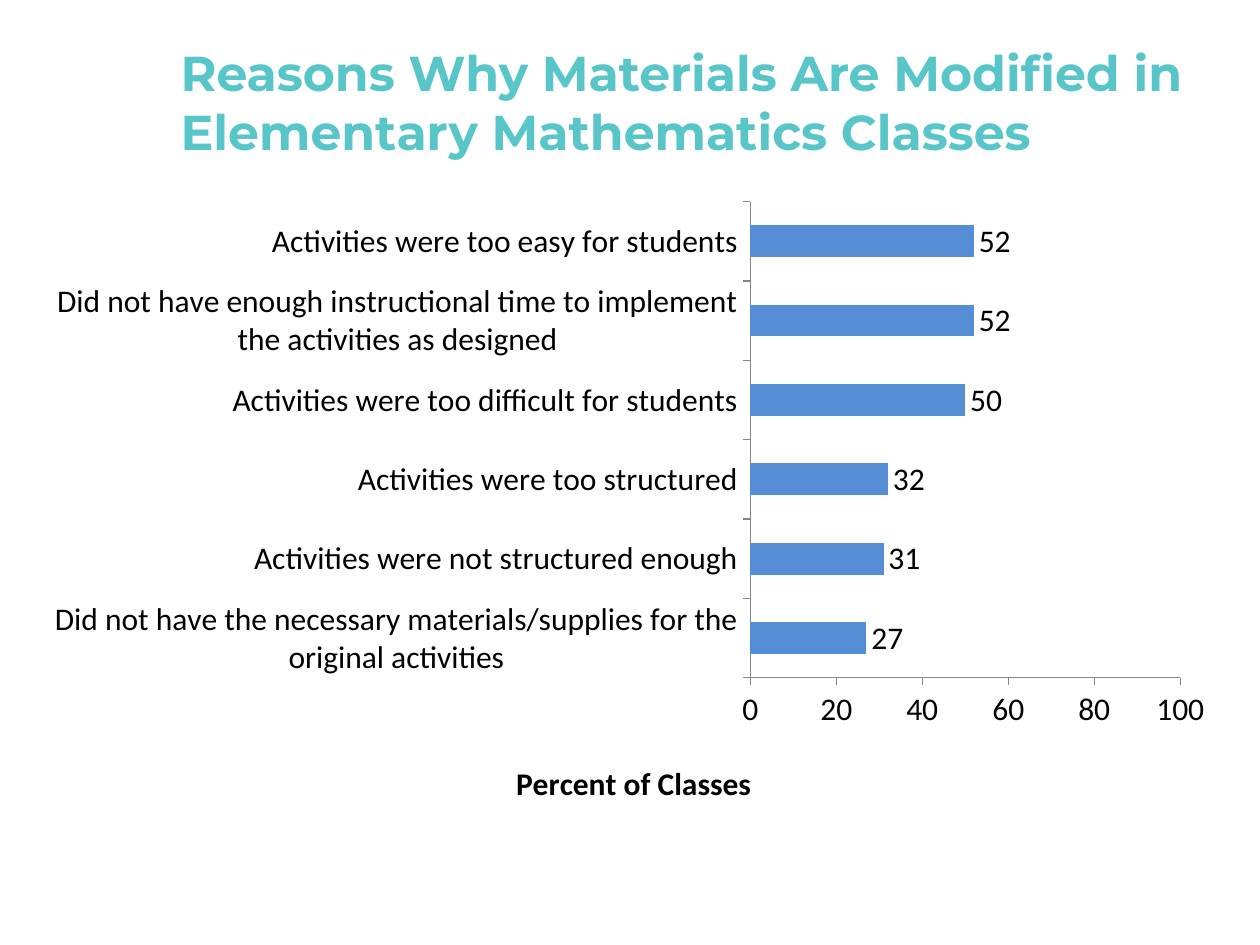
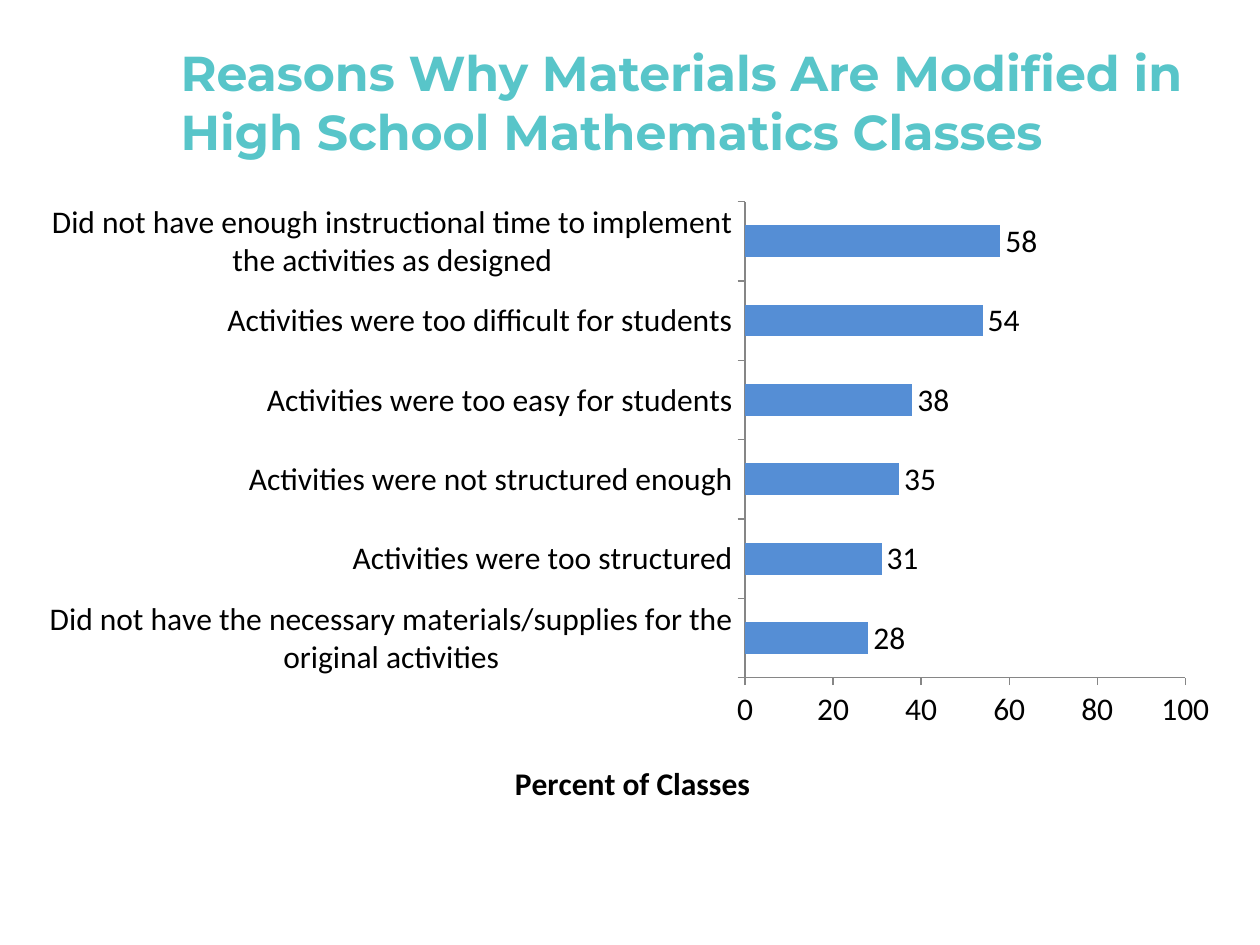
from dataclasses import dataclass

from pptx import Presentation
from pptx import util as u
from pptx.chart.axis import CategoryAxis, ValueAxis
from pptx.chart.chart import Chart
from pptx.chart.data import CategoryChartData
from pptx.dml.color import RGBColor
from pptx.enum import chart as charts, text
from pptx.oxml import parse_xml
from pptx.oxml.ns import nsdecls, qn
from pptx.slide import Slide

COLORS = {"title": "58C5C9", "bar": "558ED5", "text": "000000", "axis": "868686"}
TITLE_FONT = "Montserrat"
CHART_FONT = "Calibri"
SLIDE_WIDTH = 720
CHART_TOP = 108
CHART_HEIGHT = 360

NO_SUPPLIES = "Did not have the necessary materials/supplies for the original activities"
TOO_LOOSE = "Activities were not structured enough"
TOO_STRUCTURED = "Activities were too structured"
TOO_DIFFICULT = "Activities were too difficult for students"
TOO_EASY = "Activities were too easy for students"
NO_TIME = "Did not have enough instructional time to implement the activities as designed"


@dataclass(frozen=True)
class ReasonsSlide:
    school_level: str
    chart_left: float
    plot_left: float
    plot_width: float
    percents: dict[str, int]


REASONS_SLIDES = [
    ReasonsSlide("Elementary", 18, 428.8, 245.7, {
        NO_SUPPLIES: 27, TOO_LOOSE: 31, TOO_STRUCTURED: 32,
        TOO_DIFFICULT: 50, NO_TIME: 52, TOO_EASY: 52,
    }),
    ReasonsSlide("High School", 15, 425.8, 251.5, {
        NO_SUPPLIES: 28, TOO_STRUCTURED: 31, TOO_LOOSE: 35,
        TOO_EASY: 38, TOO_DIFFICULT: 54, NO_TIME: 58,
    }),
]


def color(name: str) -> RGBColor:
    return RGBColor.from_string(COLORS[name])


def set_layout(parent, index: int, target: str = "", **fractions: float) -> None:
    for layout in parent.findall(qn("c:layout")):
        parent.remove(layout)
    modes = "".join(f'<c:{side}Mode val="edge"/>' for side in "xy")
    values = "".join(f'<c:{key} val="{value:.4f}"/>' for key, value in fractions.items())
    parent.insert(index, parse_xml(
        f'<c:layout {nsdecls("c")}><c:manualLayout>{target}{modes}{values}'
        "</c:manualLayout></c:layout>"
    ))


def add_title(slide: Slide, school_level: str) -> None:
    title = slide.shapes.title
    title.left, title.top = u.Pt(96), u.Pt(24)
    title.width, title.height = u.Pt(588), u.Pt(68)
    frame = title.text_frame
    frame.text = f"Reasons Why Materials Are Modified in {school_level} Mathematics Classes"
    frame.word_wrap = True
    frame.auto_size = text.MSO_AUTO_SIZE.NONE
    frame.vertical_anchor = text.MSO_ANCHOR.MIDDLE
    paragraph = frame.paragraphs[0]
    paragraph.alignment = text.PP_ALIGN.LEFT
    paragraph.font.name = TITLE_FONT
    paragraph.font.size = u.Pt(28)
    paragraph.font.bold = True
    paragraph.font.color.rgb = color("title")


def format_axis(axis: CategoryAxis | ValueAxis) -> None:
    axis.has_major_gridlines = False
    axis.major_tick_mark = charts.XL_TICK_MARK.OUTSIDE
    axis.minor_tick_mark = charts.XL_TICK_MARK.NONE
    axis.tick_labels.font.size = u.Pt(18)
    axis.format.line.color.rgb = color("axis")
    axis.format.line.width = u.Pt(0.75)


def format_value_axis(axis: ValueAxis) -> None:
    format_axis(axis)
    axis.minimum_scale, axis.maximum_scale, axis.major_unit = 0, 100, 20
    frame = axis.axis_title.text_frame
    frame.text = "Percent of Classes"
    font = frame.paragraphs[0].font
    font.name = CHART_FONT
    font.size = u.Pt(18)
    font.bold = True
    font.color.rgb = color("text")
    set_layout(axis.axis_title._element, 1, x=0.4, y=0.9)


def format_bars(chart: Chart) -> None:
    plot = chart.plots[0]
    plot.gap_width = 150
    plot.vary_by_categories = False
    plot.has_data_labels = True
    plot.data_labels.show_value = True
    plot.data_labels.position = charts.XL_LABEL_POSITION.OUTSIDE_END
    fill = plot.series[0].format.fill
    fill.solid()
    fill.fore_color.rgb = color("bar")


def add_reasons_chart(slide: Slide, reasons: ReasonsSlide) -> None:
    data = CategoryChartData()
    data.categories = list(reasons.percents)
    data.add_series("Series 1", list(reasons.percents.values()))
    chart_width = SLIDE_WIDTH - 2 * reasons.chart_left
    chart = slide.shapes.add_chart(
        charts.XL_CHART_TYPE.BAR_CLUSTERED, u.Pt(reasons.chart_left), u.Pt(CHART_TOP),
        u.Pt(chart_width), u.Pt(CHART_HEIGHT), data,
    ).chart
    chart.has_title = False
    chart.has_legend = False
    chart.font.name = CHART_FONT
    chart.font.size = u.Pt(18)
    chart.font.color.rgb = color("text")
    format_axis(chart.category_axis)
    format_value_axis(chart.value_axis)
    format_bars(chart)
    set_layout(
        chart._chartSpace.chart.plotArea, 0, '<c:layoutTarget val="inner"/>',
        x=(reasons.plot_left - reasons.chart_left) / chart_width, y=0.02,
        w=reasons.plot_width / chart_width, h=0.756,
    )


def main() -> None:
    presentation = Presentation()
    presentation.slide_width = u.Pt(SLIDE_WIDTH)
    presentation.slide_height = u.Pt(540)
    title_only = presentation.slide_layouts.get_by_name("Title Only")
    for reasons in REASONS_SLIDES:
        slide = presentation.slides.add_slide(title_only)
        add_reasons_chart(slide, reasons)
        add_title(slide, reasons.school_level)
    presentation.save("out.pptx")


if __name__ == "__main__":
    main()
